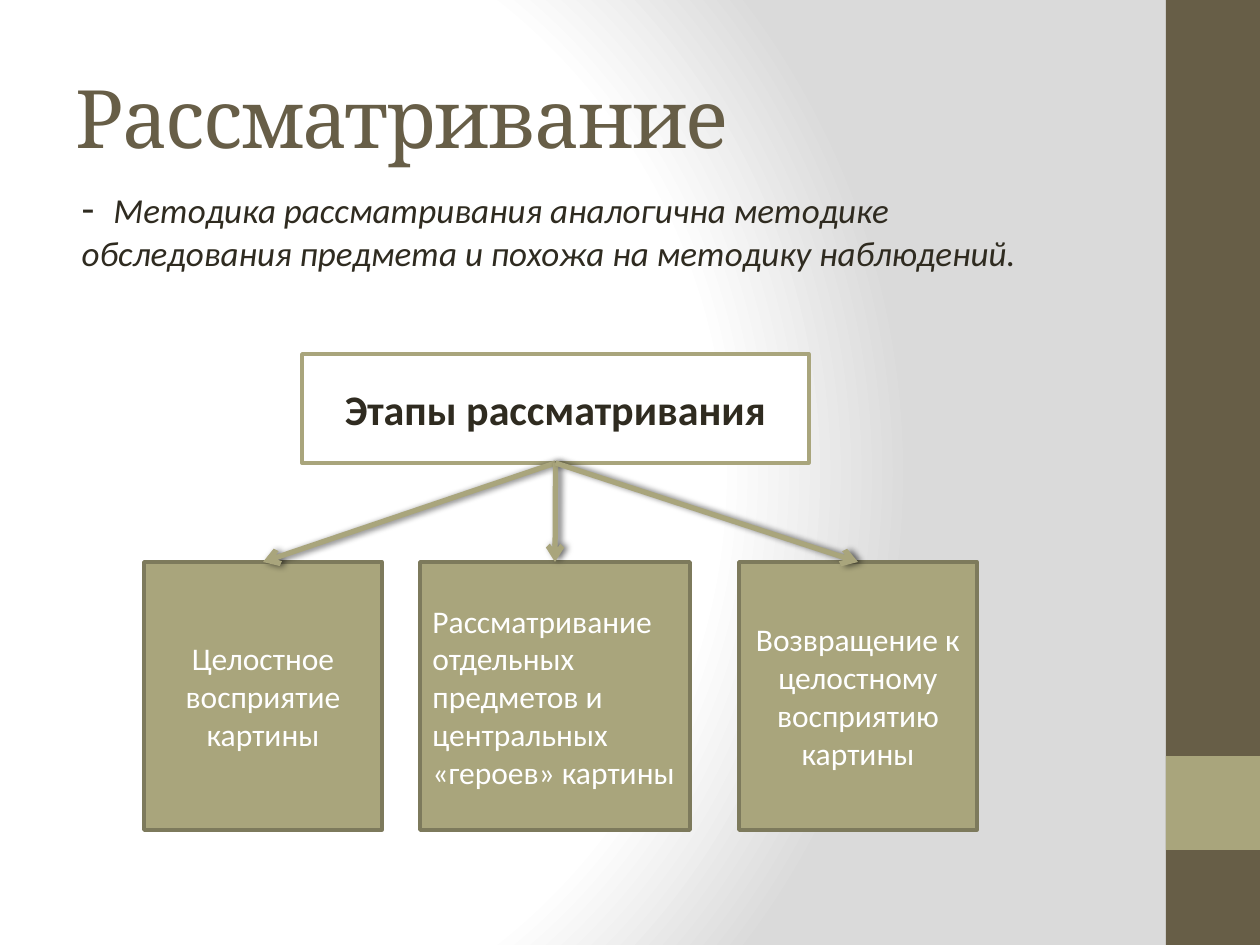
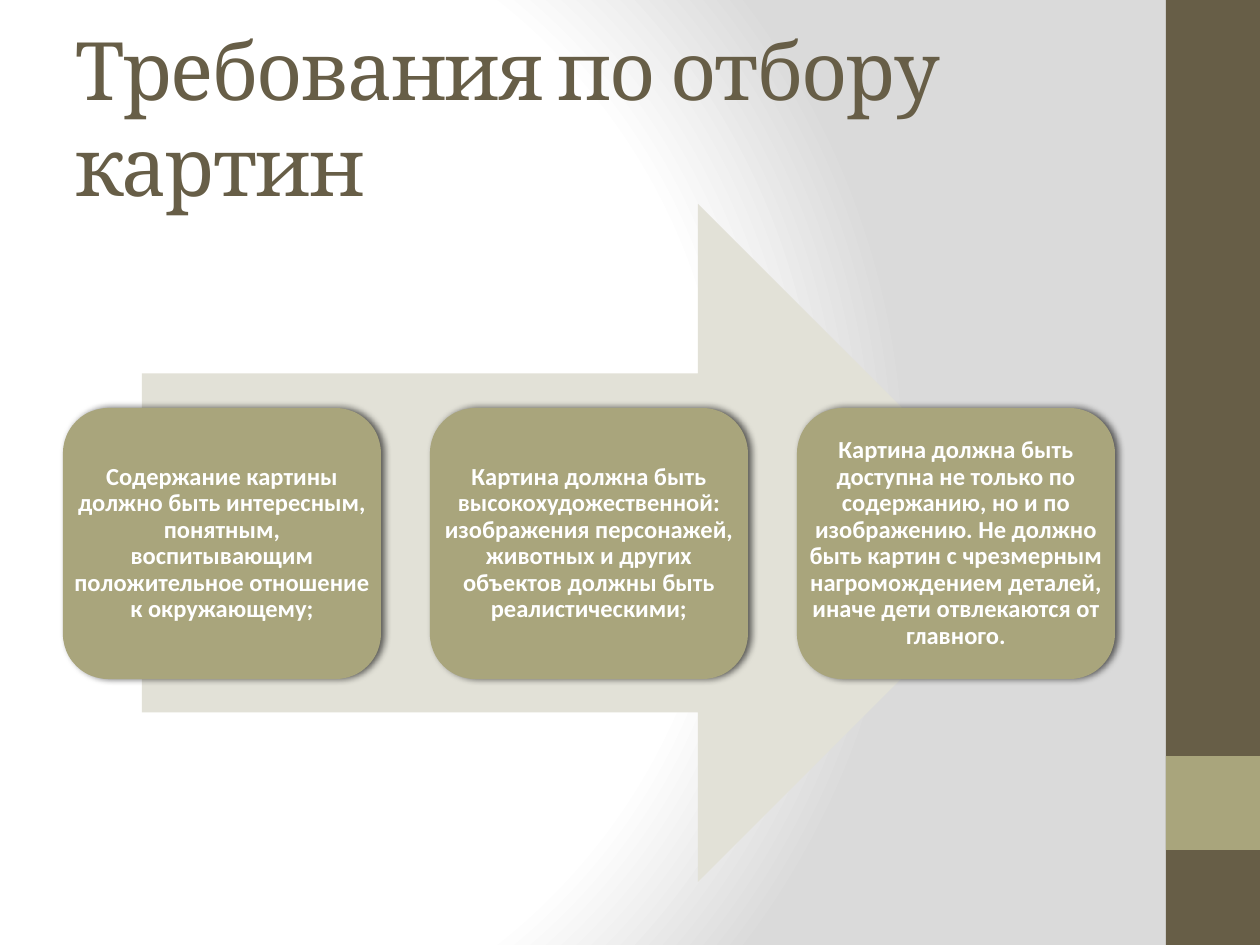
import pptx
import pptx.util
import pptx.dml.color
import pptx.enum.shapes
import pptx.enum.text
import pptx.oxml
import pptx.oxml.ns
import lxml.etree

RGB = pptx.dml.color.RGBColor
BROWN = RGB(0x67, 0x5E, 0x47)
OLIVE = RGB(0xA9, 0xA5, 0x7C)
OLIVE_DARK = RGB(0x7D, 0x7A, 0x5C)
PALE = RGB(0xE2, 0xE1, 0xD7)
INK = RGB(0x2F, 0x2B, 0x20)
WHITE = RGB(0xFF, 0xFF, 0xFF)
GREY = RGB(0xDA, 0xDA, 0xDA)

SHAPE = pptx.enum.shapes.MSO_SHAPE
ALIGN = pptx.enum.text.PP_ALIGN
MIDDLE = pptx.enum.text.MSO_ANCHOR.MIDDLE
TOP = pptx.enum.text.MSO_ANCHOR.TOP
Pt = pptx.util.Pt
qn = pptx.oxml.ns.qn
EMU_PER_PX = 914400 / 126


def px(n):
    return pptx.util.Emu(round(n * EMU_PER_PX))


def place(sp, x, y, w, h):
    sp.left, sp.top, sp.width, sp.height = px(x), px(y), px(w), px(h)


def add_text(p, text, size=18, font="Calibri", color=WHITE, bold=False, italic=False, spacing=None):
    r = p.add_run()
    r.text = text
    r.font.size, r.font.name = Pt(size), font
    r.font.bold, r.font.italic = bold, italic
    r.font.color.rgb = color
    if spacing is not None:
        r.font._element.set("spc", str(spacing))
    return r


def set_frame(sp, anchor=MIDDLE, align=ALIGN.CENTER, inset=None):
    tf = sp.text_frame
    tf.word_wrap = True
    tf.auto_size = pptx.enum.text.MSO_AUTO_SIZE.NONE
    tf.vertical_anchor = anchor
    if inset is not None:
        tf.margin_left = tf.margin_right = tf.margin_top = tf.margin_bottom = px(inset)
    p = tf.paragraphs[0]
    p.alignment = align
    return p


def add_shadow(sp):
    spPr = sp.element.spPr
    effects = spPr.find(qn("a:effectLst"))
    if effects is None:
        effects = lxml.etree.SubElement(spPr, qn("a:effectLst"))
    shadow = lxml.etree.SubElement(effects, qn("a:outerShdw"), blurRad=str(Pt(4)),
                                   dist=str(Pt(2)), dir="0", rotWithShape="0")
    color = lxml.etree.SubElement(shadow, qn("a:srgbClr"), val="000000")
    lxml.etree.SubElement(color, qn("a:alpha"), val="60000")


def add_box(shapes, kind, x, y, w, h, fill, line=None):
    sp = shapes.add_shape(kind, px(x), px(y), px(w), px(h))
    sp.shadow.inherit = False
    sp.fill.solid()
    sp.fill.fore_color.rgb = fill
    if line is None:
        sp.line.fill.background()
    else:
        sp.line.color.rgb = line
        sp.line.width = Pt(2)
    return sp


def add_arrow(s, start, end):
    cxn = s.shapes.add_connector(pptx.enum.shapes.MSO_CONNECTOR.STRAIGHT, 0, 0, 0, 0)
    cxn.begin_connect(start, 2)
    cxn.end_connect(end, 0)
    cxn.line.color.rgb = OLIVE
    cxn.line.width = Pt(3)
    lxml.etree.SubElement(cxn.element.spPr.find(qn("a:ln")), qn("a:tailEnd"), type="arrow")
    add_shadow(cxn)


def set_background(master):
    stops = "".join(f'<a:gs pos="{pos}"><a:srgbClr val="{color}"/></a:gs>'
                    for pos, color in ((0, WHITE), (75000, WHITE), (100000, GREY)))
    cSld = master.element.cSld
    cSld.remove(cSld.find(qn("p:bg")))
    cSld.insert(0, pptx.oxml.parse_xml(
        f'<p:bg {pptx.oxml.ns.nsdecls("p", "a")}><p:bgPr><a:gradFill rotWithShape="1">'
        f'<a:gsLst>{stops}</a:gsLst><a:path path="circle">'
        '<a:fillToRect l="20000" t="50000" r="100000" b="50000"/></a:path>'
        '</a:gradFill><a:effectLst/></p:bgPr></p:bg>'))


def move_to_master(master, sp, index):
    sp.element.nvSpPr.cNvPr.set("id", str(100 + index))
    master.shapes.element.insert(2 + index, sp.element)


def add_side_bands(master, s):
    bands = ((0, 945, BROWN), (756, 94, OLIVE))
    for i, (y, h, color) in enumerate(bands):
        move_to_master(master, add_box(s.shapes, SHAPE.RECTANGLE, 1166, y, 94, h, color), i)


def add_title(s, text):
    title = s.shapes.title
    place(title, 63, 38, 1050, 157)
    p = set_frame(title, align=ALIGN.LEFT)
    add_text(p, text, size=46, font="Cambria", color=BROWN, spacing=-100)


def add_method_note(s, text):
    body = s.placeholders[1]
    place(body, 54, 175, 1050, 662)
    p = set_frame(body, anchor=TOP, align=ALIGN.LEFT)
    pPr = p._p.get_or_add_pPr()
    pPr.set("marL", str(px(15)))
    pPr.set("indent", "0")
    p.space_before = Pt(5)
    lxml.etree.SubElement(pPr, qn("a:buNone"))
    add_text(p, "-  ", size=24, color=INK)
    add_text(p, text, size=20, color=INK, italic=True)


def add_stages(s, heading, stages):
    head = add_box(s.shapes, SHAPE.RECTANGLE, 302, 354, 507, 109, WHITE, OLIVE)
    add_text(set_frame(head), heading, size=24, color=INK, bold=True)
    boxes = []
    for x, w, align, text in stages:
        box = add_box(s.shapes, SHAPE.RECTANGLE, x, 562, w, 268, OLIVE, OLIVE_DARK)
        add_text(set_frame(box, align=align), text)
        boxes.append(box)
    for box in boxes:
        add_arrow(s, head, box)


def add_requirements(s, requirements):
    shapes = s.shapes.add_group_shape().shapes
    add_box(shapes, SHAPE.RIGHT_ARROW, 142, 204, 895, 678, PALE)
    for i, text in enumerate(requirements):
        frame = (63 + 367 * i, 408, 318, 271)
        add_shadow(add_box(shapes, SHAPE.ROUNDED_RECTANGLE, *frame, OLIVE))
        label = shapes.add_textbox(*map(px, frame))
        p = set_frame(label, inset=8)
        p.line_spacing = 0.9
        add_text(p, text, size=14, bold=True)


def main():
    prs = pptx.Presentation()
    prs.slide_width, prs.slide_height = px(1260), px(945)
    master = prs.slide_master
    set_background(master)

    s = prs.slides.add_slide(prs.slide_layouts[1])
    add_side_bands(master, s)
    add_title(s, "Рассматривание")
    add_method_note(s, "Методика рассматривания аналогична методике обследования предмета "
                       "и похожа на методику наблюдений.")
    add_stages(s, "Этапы рассматривания", (
        (144, 238, ALIGN.CENTER, "Целостное восприятие картины"),
        (420, 270, ALIGN.LEFT, "Рассматривание отдельных предметов и центральных «героев» картины"),
        (739, 238, ALIGN.CENTER, "Возвращение к целостному восприятию картины"),
    ))

    s = prs.slides.add_slide(prs.slide_layouts[5])
    add_title(s, "Требования по отбору картин")
    add_requirements(s, (
        "Содержание картины должно быть интересным, понятным, воспитывающим "
        "положительное отношение к окружающему;",
        "Картина должна быть высокохудожественной: изображения персонажей, "
        "животных и других объектов должны быть реалистическими;",
        "Картина должна быть доступна не только по содержанию, но и по изображению. "
        "Не должно быть картин с чрезмерным нагромождением деталей, "
        "иначе дети отвлекаются от главного.",
    ))
    prs.save("out.pptx")


if __name__ == "__main__":
    main()
